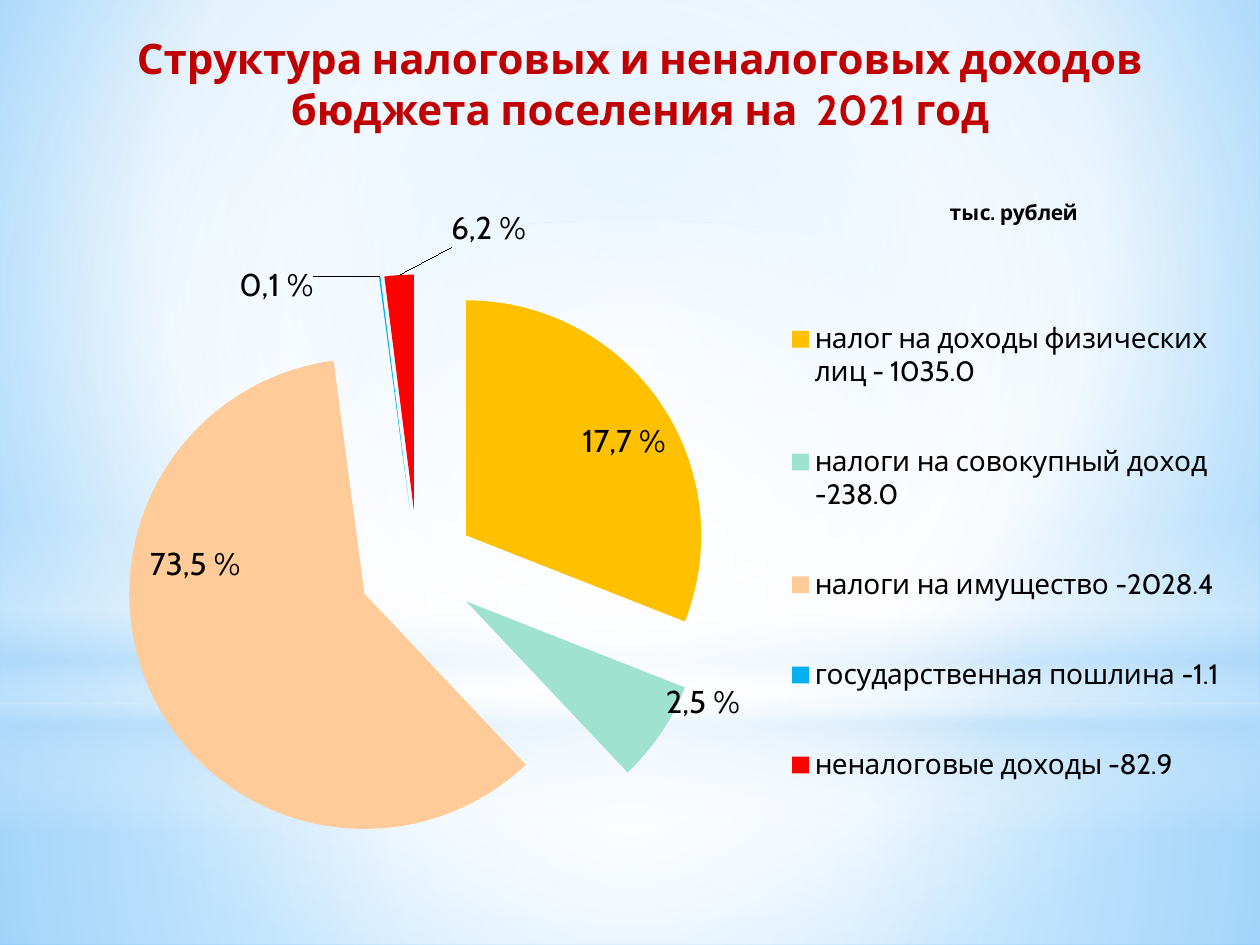
import lxml.etree
import pptx
import pptx.chart.data
import pptx.dml.color
import pptx.enum.chart
import pptx.enum.shapes
import pptx.enum.text
import pptx.oxml
import pptx.oxml.ns
import pptx.util

Inches, Pt = pptx.util.Inches, pptx.util.Pt
RGBColor = pptx.dml.color.RGBColor
qn = pptx.oxml.ns.qn
Position = pptx.enum.chart.XL_LABEL_POSITION

FONT = "Cabin"
BLACK = RGBColor(0x00, 0x00, 0x00)
WHITE = RGBColor(0xFF, 0xFF, 0xFF)
TITLE_RED = RGBColor(0xC0, 0x00, 0x00)
SKY = RGBColor(0x9E, 0xD5, 0xFF)
DEEP_SKY = RGBColor(0x5B, 0xB9, 0xFF)
HAZE = RGBColor(0xB4, 0xDC, 0xFA)
AMBER = RGBColor(0xFF, 0xC0, 0x00)
MINT = RGBColor(0x9E, 0xE2, 0xCF)
PEACH = RGBColor(0xFF, 0xCC, 0x99)
BLUE = RGBColor(0x00, 0xB0, 0xF0)
RED = RGBColor(0xFF, 0x00, 0x00)


def paint_gradient(owner, stops, direction):
    """Swap the owner's solid fill for a gradient of (percent, colour, opacity) stops."""
    gradient = lxml.etree.Element(qn("a:gradFill"), rotWithShape="1")
    stop_list = lxml.etree.SubElement(gradient, qn("a:gsLst"))
    for percent, color, opacity in stops:
        stop = lxml.etree.SubElement(stop_list, qn("a:gs"), pos=str(percent * 1000))
        tint = lxml.etree.SubElement(stop, qn("a:srgbClr"), val=str(color))
        lxml.etree.SubElement(tint, qn("a:alpha"), val=str(opacity * 1000))
    if isinstance(direction, int):
        lxml.etree.SubElement(gradient, qn("a:lin"), ang=str(direction * 60000), scaled="0")
    else:
        circle = lxml.etree.SubElement(gradient, qn("a:path"))
        circle.set("path", "circle")
        focus = {side: str(inset * 1000) for side, inset in zip("ltrb", direction)}
        lxml.etree.SubElement(circle, qn("a:fillToRect"), **focus)
    solid = owner.find(".//" + qn("a:solidFill"))
    solid.getparent().replace(solid, gradient)


def manual_layout(left, top, width=None, height=None, inner=False):
    """Chart layout in percent of the chart; without a size it is an offset."""
    layout = lxml.etree.Element(qn("c:layout"))
    manual = lxml.etree.SubElement(layout, qn("c:manualLayout"))
    if inner:
        lxml.etree.SubElement(manual, qn("c:layoutTarget"), val="inner")
    if width or inner:
        for mode in ("xMode", "yMode"):
            lxml.etree.SubElement(manual, qn("c:" + mode), val="edge")
    for name, percent in zip("xywh", (left, top, width, height)):
        if percent is not None:
            lxml.etree.SubElement(manual, qn("c:" + name), val=str(round(percent / 100, 4)))
    return layout


deck = pptx.Presentation()
deck.slide_width, deck.slide_height = Inches(10), Inches(7.5)
page = deck.slides.add_slide(deck.slide_layouts[5])

# Background and its soft light layers
page.background.fill.solid()
page.background.fill.fore_color.rgb = WHITE
paint_gradient(page._element, [(0, SKY, 100), (60, WHITE, 100), (100, DEEP_SKY, 100)],
               (20, 10, 20, 60))

RECTANGLE = pptx.enum.shapes.MSO_SHAPE.RECTANGLE
OVAL = pptx.enum.shapes.MSO_SHAPE.OVAL
CENTER = (50, 50, 50, 50)
light_layers = [
    (RECTANGLE, 5.58, 1.92, [(0, WHITE, 91), (37, WHITE, 76), (100, HAZE, 79)], CENTER),
    (RECTANGLE, 0, 5.58, [(0, WHITE, 89), (48, WHITE, 62), (100, HAZE, 79)], CENTER),
    (RECTANGLE, 4.12, 2.5, [(0, WHITE, 0), (29, WHITE, 30), (45, HAZE, 40),
                            (55, WHITE, 26), (65, HAZE, 60), (100, WHITE, 0)], 90),
    (OVAL, 1.75, 5.58, [(0, WHITE, 100), (56, WHITE, 0)], CENTER),
]
for kind, top, height, stops, direction in light_layers:
    layer = page.shapes.add_shape(kind, 0, Inches(top), Inches(10), Inches(height))
    layer.shadow.inherit = False
    layer.line.fill.background()
    layer.fill.solid()
    layer.fill.fore_color.rgb = WHITE
    paint_gradient(layer._element, stops, direction)

# Title, in front of the light layers
title = page.shapes.title
page.shapes._spTree.append(title._element)
title.left, title.top = Inches(0.33), Inches(0.21)
title.width, title.height = Inches(9.5), Inches(1.1)
title.text_frame.text = "Структура налоговых и неналоговых доходов бюджета поселения на  2021 год"
title.text_frame.word_wrap = True
title.text_frame.auto_size = pptx.enum.text.MSO_AUTO_SIZE.NONE
title.text_frame.vertical_anchor = pptx.enum.text.MSO_ANCHOR.TOP
para = title.text_frame.paragraphs[0]
para.alignment = pptx.enum.text.PP_ALIGN.CENTER
para.font.name, para.font.size, para.font.bold = FONT, Pt(24), True
para.font.color.rgb = TITLE_RED

# Income pie: category, share, colour, label, label position, label offset
incomes = [
    ("налог на доходы физических лиц - 1035.0", 31, AMBER, "17,7 %",
     Position.CENTER, (5, -3.7)),
    ("налоги на совокупный доход -238.0", 7, MINT, "2,5 %",
     Position.OUTSIDE_END, (-0.1, -7.2)),
    ("налоги на имущество -2028.4", 60, PEACH, "73,5 %",
     Position.CENTER, (-5.2, -10.7)),
    ("государственная пошлина -1.1", 0.1, BLUE, "0,1 %",
     Position.OUTSIDE_END, (-5.4, 4.7)),
    ("неналоговые доходы -82.9", 2, RED, "6,2 %",
     Position.OUTSIDE_END, (7.4, -2.7)),
]
chart_data = pptx.chart.data.CategoryChartData()
chart_data.categories = [income[0] for income in incomes]
chart_data.add_series("тыс. рублей", [income[1] for income in incomes])
chart = page.shapes.add_chart(pptx.enum.chart.XL_CHART_TYPE.PIE, Inches(0.2), Inches(1.15),
                              Inches(9.64), Inches(5.91), chart_data).chart
chart.font.name, chart.font.size = FONT, Pt(18)
chart.font.color.rgb = BLACK

chart.has_title = True
chart.chart_title.text_frame.text = "тыс. рублей"
heading = chart.chart_title.text_frame.paragraphs[0].font
heading.name, heading.size, heading.bold = FONT, Pt(12), True
heading.color.rgb = BLACK
chart.has_legend = True
chart.legend.position = pptx.enum.chart.XL_LEGEND_POSITION.RIGHT
chart.legend.include_in_layout = False
chart.legend.font.name, chart.legend.font.size = FONT, Pt(16)
chart.legend.font.color.rgb = BLACK

placements = [
    ("c:title", 1, manual_layout(75.8, 6.6, inner=True)),
    ("c:legend", 1, manual_layout(62.7, 16.2, 36, 77)),
    ("c:plotArea", 0, manual_layout(8.1, 17.4, 48.4, 79, inner=True)),
]
for part_name, place, layout in placements:
    part = chart._chartSpace.find(".//" + qn(part_name))
    for old_layout in part.findall(qn("c:layout")):
        part.remove(old_layout)
    part.insert(place, layout)

plot = chart.plots[0]
plot.vary_by_categories = True
series = plot.series[0]
explosion = lxml.etree.Element(qn("c:explosion"), val="25")
series._element.find(qn("c:tx")).addnext(explosion)
for index, (_, _, color, text, position, offset) in enumerate(incomes):
    point = series.points[index]
    point.format.fill.solid()
    point.format.fill.fore_color.rgb = color
    point.format.line.fill.background()
    label = point.data_label
    label.text_frame.text = text
    label_font = label.text_frame.paragraphs[0].font
    label_font.name, label_font.size = FONT, Pt(18)
    label_font.color.rgb = BLACK
    label.position = position
    label_element = series._element.findall(".//" + qn("c:dLbl"))[index]
    label_element.insert(1, manual_layout(*offset))

deck.save("out.pptx")
